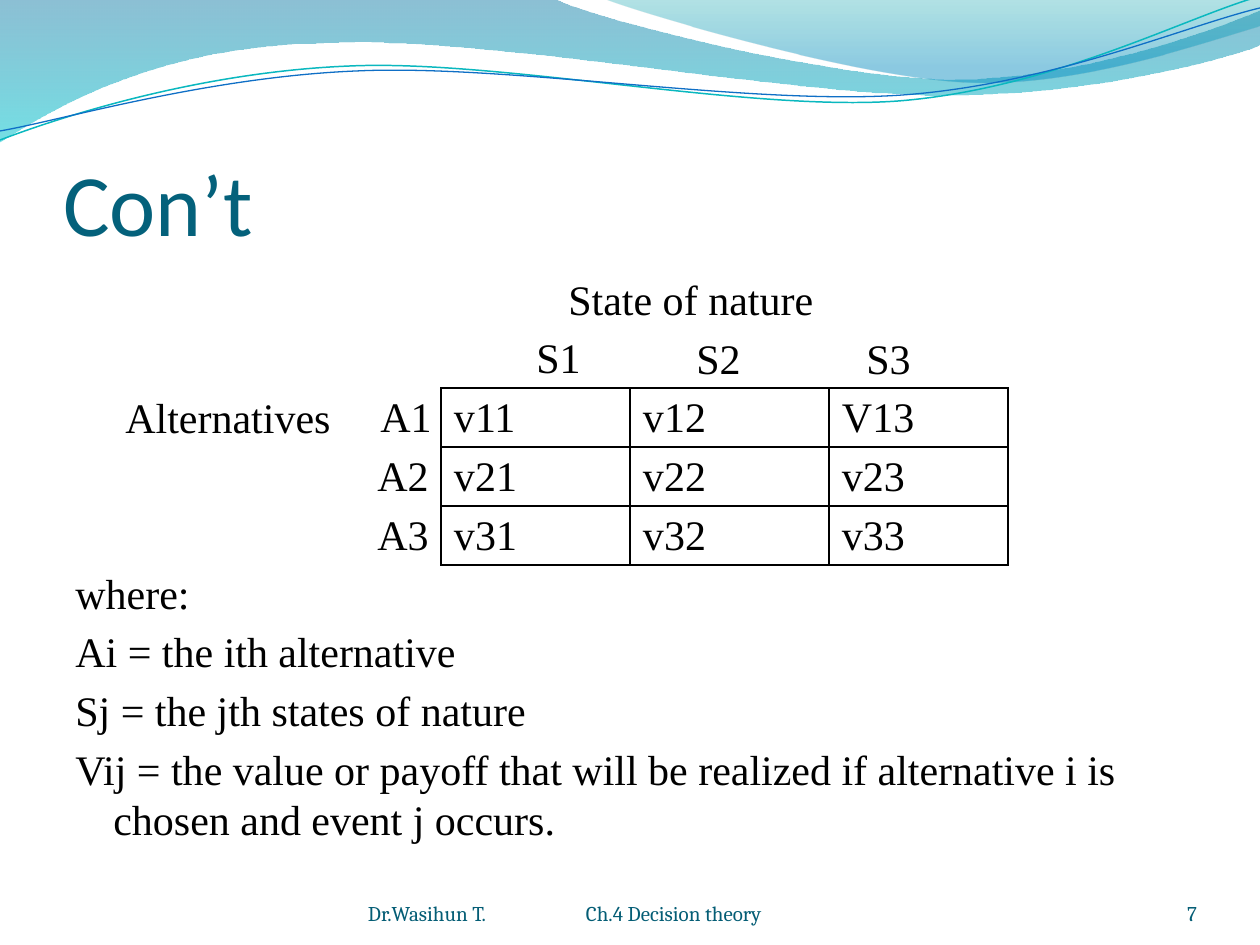
from lxml.etree import SubElement
from pptx import Presentation
from pptx.dml.color import RGBColor
from pptx.enum.text import MSO_ANCHOR as Anchor, PP_ALIGN as Align
from pptx.oxml.ns import qn
from pptx.util import Emu, Pt

PX = 914400 / 126
COLORS = {
    "title": "04617B", "footer": "045D75", "text": "000000",
    "wave_dark": "0074A1", "wave_cyan": "00C6CF",
    "crest_teal": "00A1A9", "crest_blue": "008BBF",
    "line_teal": "0AB8BF", "line_blue": "0F6FC6",
}
SERIF = "Times New Roman"

# Each outline is a start point, then line (1 point) or curve (3 points) segments
WAVE = [
    [(0, 0)], [(554, -1)],
    [(600, 21), (837, 79), (955, 79)], [(1075, 79), (1207, 33), (1260, 11)],
    [(1261, 45)], [(1239, 55), (1096, 96), (940, 95)],
    [(784, 95), (481, 35), (324, 43)], [(163, 45), (58, 105), (-1, 142)],
]
CREST = [
    [(604, -1)], [(641, 14), (859, 78), (969, 82)],
    [(1079, 87), (1211, 40), (1260, 26)], [(1260, 0)],
]
TEAL_LINE = [
    [(0, 140)], [(60, 117), (199, 72), (349, 66)],
    [(498, 59), (747, 112), (898, 101)], [(1050, 89), (1182, 19), (1257, -3)],
]
BLUE_LINE = [
    [(0, 131)], [(59, 121), (207, 77), (357, 71)],
    [(508, 64), (752, 106), (903, 95)], [(1053, 84), (1185, 26), (1260, 8)],
]

# Body lines with left margin and first-line indent
BODY_LEFT, BODY_TOP, LINE_PITCH = 63, 267, 59
BODY_LINES = [
    ("State of nature", 493, 0),
    ("S1", 461, 0),
    ("A1", 305, 0),
    ("A2", 302, 0),
    ("A3", 302, 0),
    ("where:", 38, -38),
    ("Ai = the ith alternative", 38, -38),
    ("Sj = the jth states of nature", 38, -38),
    ("Vij = the value or payoff that will be realized if alternative i is "
     "chosen and event j occurs.", 38, -38),
]
# Further labels on the same lines: text, line number, offset, width
SIDE_LABELS = [("S2", 1, 621, 80), ("S3", 1, 791, 80), ("Alternatives", 2, 50, 240)]
PAYOFFS = [["v11", "v12", "V13"], ["v21", "v22", "v23"], ["v31", "v32", "v33"]]


def px(length):
    return Emu(round(length * PX))


def color(name):
    return RGBColor.from_string(COLORS[name])


def format_runs(paragraph, size, font, color_name):
    for run in paragraph.runs:
        run.font.size = Pt(size)
        run.font.name = font
        run.font.color.rgb = color(color_name)


def set_margins(frame, left=0, top=0, right=0, bottom=0):
    frame.margin_left, frame.margin_top = px(left), px(top)
    frame.margin_right, frame.margin_bottom = px(right), px(bottom)


def add_outline(slide, outline, close):
    """Build the outline through its end points, then bend the curved segments."""
    start, *ends = [(px(x), px(y)) for x, y in (segment[-1] for segment in outline)]
    builder = slide.shapes.build_freeform(*start)
    builder.add_line_segments(ends, close=close)
    shape = builder.convert_to_shape()
    shape.shadow.inherit = False
    lines = list(shape._element.iter(qn("a:lnTo")))
    for line, segment in zip(lines, outline[1:]):
        if len(segment) == 3:
            curve = line.makeelement(qn("a:cubicBezTo"))
            for x, y in segment:
                SubElement(curve, qn("a:pt"), x=str(px(x) - shape.left),
                           y=str(px(y) - shape.top))
            line.getparent().replace(line, curve)
    return shape


def add_wave(slide, outline, stops):
    shape = add_outline(slide, outline, close=True)
    shape.line.fill.background()
    shape.fill.gradient()
    shape.fill.gradient_angle = 270
    for stop, (position, name, opacity) in zip(shape.fill.gradient_stops, stops):
        stop.position = position
        stop.color.rgb = color(name)
        color_element = stop._gs.find(qn("a:srgbClr"))
        SubElement(color_element, qn("a:alpha"), val=str(opacity * 1000))


def add_wave_line(slide, outline, name, width):
    shape = add_outline(slide, outline, close=False)
    shape.fill.background()
    shape.line.color.rgb = color(name)
    shape.line.width = Pt(width)


def set_title(slide):
    title = slide.shapes.title
    title.left, title.top, title.width, title.height = map(px, (63, 97, 1134, 157))
    frame = title.text_frame
    frame.text = "Con’t"
    frame.vertical_anchor = Anchor.BOTTOM
    set_margins(frame, top=6)
    frame.paragraphs[0].alignment = Align.LEFT
    format_runs(frame.paragraphs[0], 50, "Calibri", "title")


def add_text(slide, lines, left, top, width, height):
    frame = slide.shapes.add_textbox(*map(px, (left, top, width, height))).text_frame
    frame.word_wrap = True
    frame.text = "\n".join(text for text, _, _ in lines)
    for paragraph, (_, margin, indent) in zip(frame.paragraphs, lines):
        paragraph.space_before = Pt(4.8)
        properties = paragraph._p.get_or_add_pPr()
        properties.set("marL", str(px(margin)))
        properties.set("indent", str(px(indent)))
        format_runs(paragraph, 24, SERIF, "text")


def set_borders(cell):
    properties = cell._tc.get_or_add_tcPr()
    for index, side in enumerate(("a:lnL", "a:lnR", "a:lnT", "a:lnB")):
        border = properties.makeelement(qn(side), {"w": str(Pt(1))})
        fill = SubElement(border, qn("a:solidFill"))
        SubElement(fill, qn("a:srgbClr"), val=COLORS["text"])
        properties.insert(index, border)


def add_payoff_table(slide):
    widths, row_height = (189, 199, 179), 59
    table = slide.shapes.add_table(
        len(PAYOFFS), len(widths),
        *map(px, (441, 388, sum(widths), row_height * len(PAYOFFS)))).table
    table.first_row = table.horz_banding = False
    for column, width in zip(table.columns, widths):
        column.width = px(width)
    for row, values in zip(table.rows, PAYOFFS):
        row.height = px(row_height)
        for cell, value in zip(row.cells, values):
            cell.text = value
            cell.fill.background()
            set_margins(cell, left=13, top=7, right=13, bottom=1)
            format_runs(cell.text_frame.paragraphs[0], 24, SERIF, "text")
            set_borders(cell)


def add_footer(slide, text, left, width, alignment):
    frame = slide.shapes.add_textbox(*map(px, (left, 876, width, 50))).text_frame
    frame.word_wrap = True
    frame.vertical_anchor = Anchor.BOTTOM
    set_margins(frame)
    frame.text = text
    frame.paragraphs[0].alignment = alignment
    format_runs(frame.paragraphs[0], 12, "Cambria", "footer")


def main():
    presentation = Presentation()
    presentation.slide_width, presentation.slide_height = px(1260), px(945)
    slide = presentation.slides.add_slide(presentation.slide_layouts[5])

    # Wave decoration
    add_wave(slide, WAVE, [(0, "wave_dark", 45), (1, "wave_cyan", 55)])
    add_wave(slide, CREST, [(0, "crest_teal", 30), (0.8, "crest_blue", 45)])
    add_wave_line(slide, TEAL_LINE, "line_teal", 0.85)
    add_wave_line(slide, BLUE_LINE, "line_blue", 0.75)

    # Title, text and payoff table
    set_title(slide)
    add_text(slide, BODY_LINES, BODY_LEFT, BODY_TOP, 1134, 605)
    for text, line, offset, width in SIDE_LABELS:
        add_text(slide, [(text, 0, 0)], BODY_LEFT + offset,
                 BODY_TOP + line * LINE_PITCH, width, LINE_PITCH)
    add_payoff_table(slide)

    # Footer
    add_footer(slide, "7", 1092, 105, Align.RIGHT)
    add_footer(slide, "Dr.Wasihun T.", 368, 200, Align.LEFT)
    add_footer(slide, "Ch.4 Decision theory", 586, 244, Align.LEFT)
    presentation.save("out.pptx")


if __name__ == "__main__":
    main()
